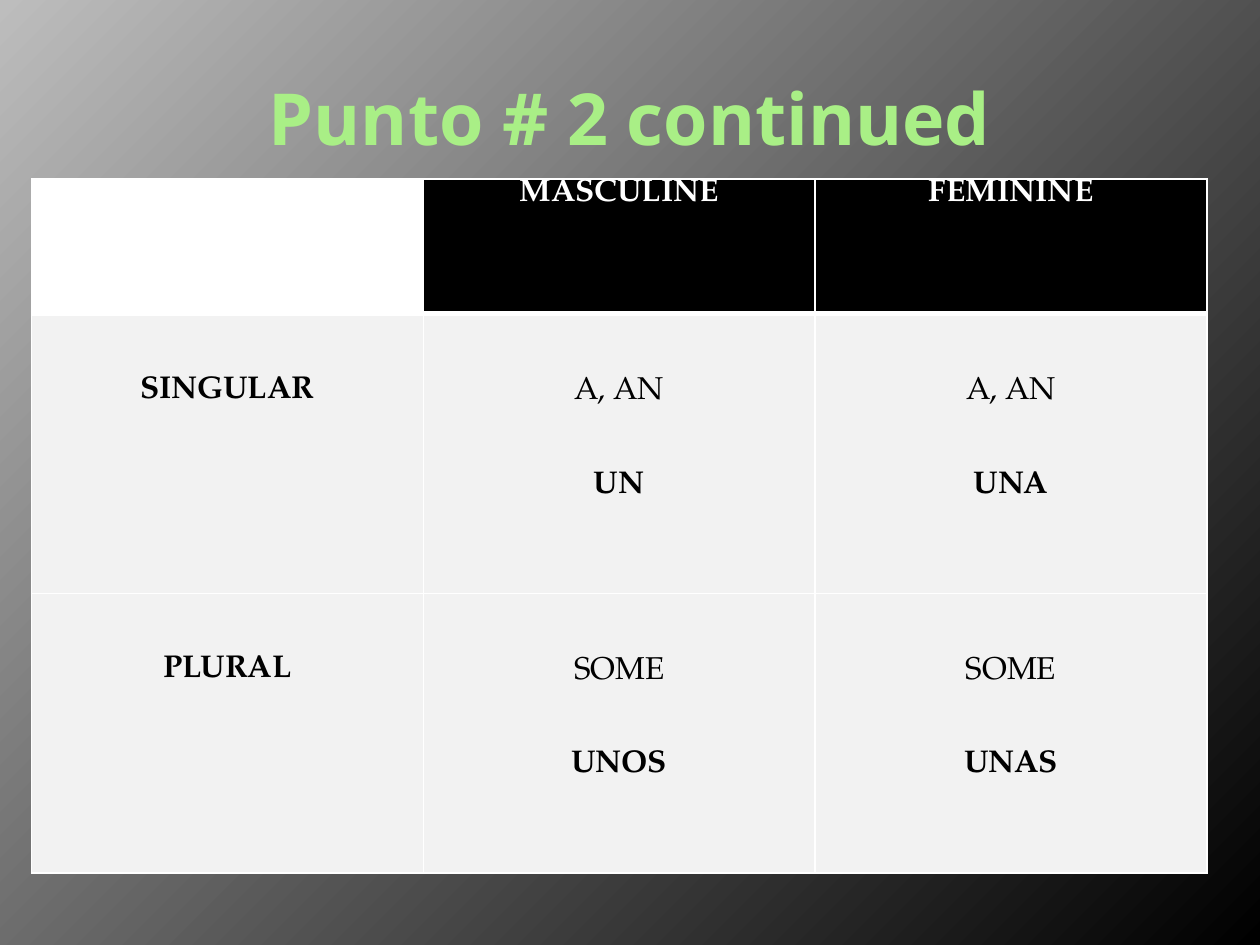
from lxml import etree
from pptx import Presentation
from pptx.dml.color import RGBColor
from pptx.enum.text import MSO_ANCHOR, PP_ALIGN
from pptx.oxml.ns import qn
from pptx.util import Inches, Pt

CENTER = PP_ALIGN.CENTER
MIDDLE = MSO_ANCHOR.MIDDLE
HEX = {"white": "FFFFFF", "black": "000000", "pale": "F2F2F2",
       "green": "A9EF86", "gray": "BDBDBD"}
RGB = {name: RGBColor.from_string(code) for name, code in HEX.items()}


def border(cell, side, width, place):
    line = etree.Element(qn(f"a:ln{side}"), w=str(Pt(width)))
    fill = etree.SubElement(line, qn("a:solidFill"))
    etree.SubElement(fill, qn("a:srgbClr"), val=HEX["white"])
    cell._tc.get_or_add_tcPr().insert(place, line)


deck = Presentation()
deck.slide_width, deck.slide_height = Inches(10), Inches(7.5)
slide = deck.slides.add_slide(deck.slide_layouts[5])

back = slide.background.fill
back.gradient()
back.gradient_angle = 315
for stop, name in zip(back.gradient_stops, ("gray", "black")):
    stop.color.rgb = RGB[name]

title = slide.shapes.title
title.left, title.top = Inches(0.5), Inches(0.3)
title.width, title.height = Inches(9), Inches(1.25)
frame = title.text_frame
frame.text = "Punto # 2 continued"
frame.vertical_anchor = MIDDLE
para = frame.paragraphs[0]
para.alignment = CENTER
para.font.name, para.font.size, para.font.bold = "Noto Sans", Pt(41), True
para.font.color.rgb = RGB["green"]

rows = [
    ["", "MASCULINE", "FEMININE"],
    ["SINGULAR", "A, AN\nUN", "A, AN\nUNA"],
    ["PLURAL", "SOME\nUNOS", "SOME\nUNAS"],
]
table = slide.shapes.add_table(3, 3, Inches(0.25), Inches(1.42),
                               Inches(9.33), Inches(5.5)).table
table.first_row = table.horz_banding = False
for col in table.columns:
    col.width = Inches(3.11)
for row, height in zip(table.rows, (1.07, 2.22, 2.22)):
    row.height = Inches(height)

for r, row in enumerate(rows):
    for c, text in enumerate(row):
        cell = table.cell(r, c)
        head = r == 0
        cell.margin_top = cell.margin_bottom = 0
        cell.fill.solid()
        shade = "pale" if not head else "black" if text else "white"
        cell.fill.fore_color.rgb = RGB[shade]
        for place, side in enumerate("LRTB"):
            thick = (head and side == "B") or (r == 1 and side == "T")
            border(cell, side, 3 if thick else 1, place)
        cell.text = text
        paras = cell.text_frame.paragraphs
        for para in paras:
            para.alignment = CENTER
            if not head:
                para.line_spacing = 3.0
            font = para.font
            font.name, font.size = "TeX Gyre Pagella", Pt(18)
            font.bold = para.text not in ("A, AN", "SOME")
            font.color.rgb = RGB["white" if head else "black"]

deck.save("out.pptx")
